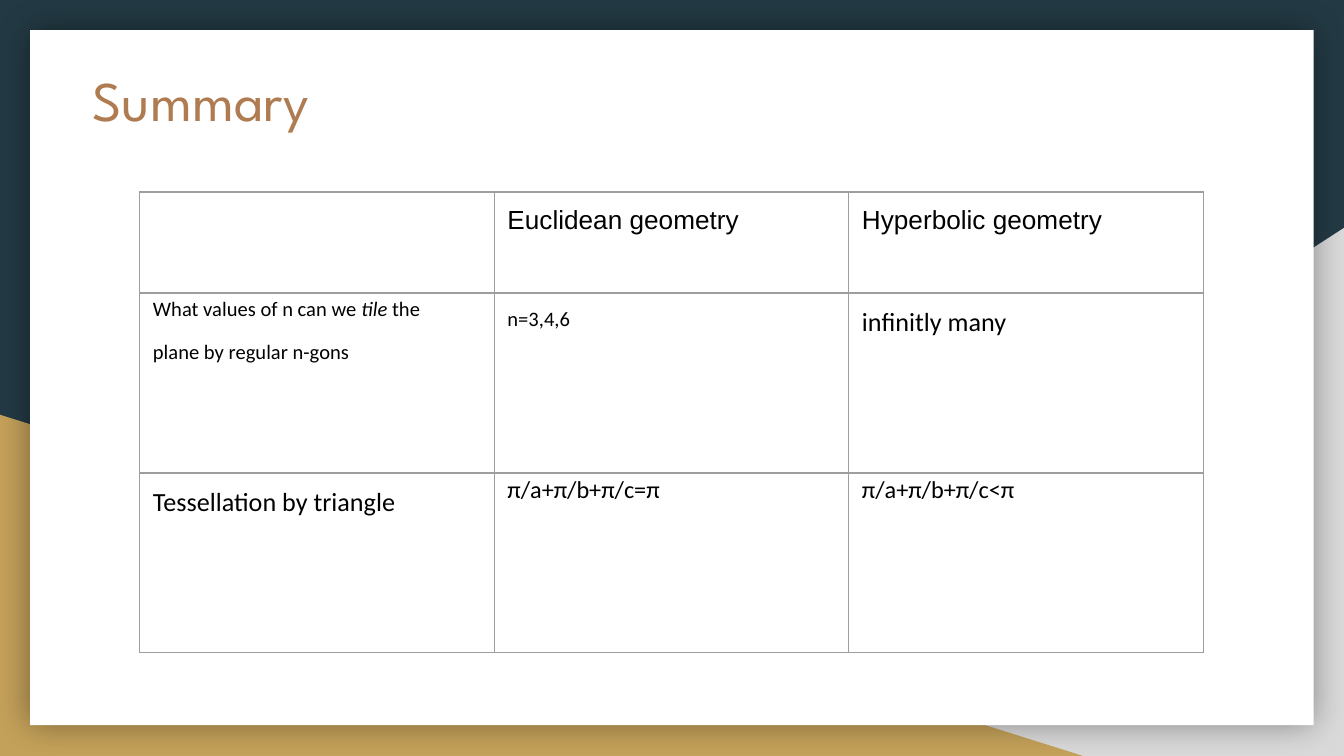
"""Build a summary slide comparing Euclidean and hyperbolic geometry."""
from lxml.etree import SubElement
from pptx import Presentation
from pptx.dml.color import RGBColor
from pptx.enum.shapes import MSO_SHAPE
from pptx.enum.text import MSO_ANCHOR, MSO_AUTO_SIZE, PP_ALIGN
from pptx.oxml import parse_xml
from pptx.oxml.ns import nsdecls, qn
from pptx.util import Cm, Pt

NAVY = RGBColor(0x23, 0x3A, 0x44)
GREY = RGBColor(0xD9, 0xD9, 0xD9)
GOLD = RGBColor(0xC4, 0xA1, 0x5A)
WHITE = RGBColor(0xFF, 0xFF, 0xFF)
BROWN = RGBColor(0xAF, 0x7B, 0x51)
BLACK = RGBColor(0x00, 0x00, 0x00)
BORDER = RGBColor(0x9E, 0x9E, 0x9E)

SLIDE_SIZE = (25.4, 14.29)
TITLE = "Summary"
TITLE_BOX = (1.5, 0.99, 20.85, 2.64)
BACKDROP = [
    (MSO_SHAPE.RIGHT_TRIANGLE, (9.96, 4.31, 15.44, 9.98), GREY, True),
    (MSO_SHAPE.RIGHT_TRIANGLE, (0, 7.84, 20.47, 6.45), GOLD, False),
]
CARD_BOX = (0.57, 0.57, 24.26, 13.14)
TABLE_ORIGIN = (2.64, 3.63)
COLUMN_WIDTH = 6.7
ROW_HEIGHTS = (1.91, 3.4, 3.4)
INSET = 0.25

TIGHT = {"line_spacing": 0.5}
TIGHT_AFTER = {"line_spacing": 0.5, "space_after": Pt(16)}
TIGHT_AROUND = {**TIGHT_AFTER, "space_before": Pt(16)}

# Each cell: font, size, then paragraphs of (spacing, [(text, italic), ...]).
ROWS = [
    [
        ("Arial", 14, []),
        ("Arial", 14, [({}, [("Euclidean geometry", False)])]),
        ("Arial", 14, [({}, [("Hyperbolic geometry", False)])]),
    ],
    [
        ("Calibri", 11, [
            (TIGHT, [("What values of n can we ", False), ("tile ", True), ("the", False)]),
            (TIGHT_AROUND, [("plane by regular n-gons", False)]),
        ]),
        ("Calibri", 11, [({}, [("n=3,4,6", False)])]),
        ("Calibri", 14, [({}, [("infinitly many", False)])]),
    ],
    [
        ("Calibri", 14, [({}, [("Tessellation by triangle", False)])]),
        ("Calibri", 13, [(TIGHT_AFTER, [("π/a+π/b+π/c=π", False)])]),
        ("Calibri", 13, [(TIGHT_AFTER, [("π/a+π/b+π/c<π", False)])]),
    ],
]


def lengths(values):
    return [Cm(value) for value in values]


def add_span(para, text, font, size, color, italic=False):
    span = para.add_run()
    span.text = text
    span.font.name = font
    span.font.size = Pt(size)
    span.font.italic = italic
    span.font.color.rgb = color


def set_insets(holder):
    for side in ("left", "top", "right", "bottom"):
        setattr(holder, f"margin_{side}", Cm(INSET))


def add_panel(page, kind, box, color):
    panel = page.shapes.add_shape(kind, *lengths(box))
    panel.shadow.inherit = False
    panel.fill.solid()
    panel.fill.fore_color.rgb = color
    panel.line.fill.background()
    return panel


def add_glow(panel):
    effects = panel.element.spPr.find(qn("a:effectLst"))
    shadow = SubElement(effects, qn("a:outerShdw"), blurRad=str(Pt(18)), dist="0",
                        dir="0", algn="ctr", rotWithShape="0")
    color = SubElement(shadow, qn("a:srgbClr"), val=str(BLACK))
    SubElement(color, qn("a:alpha"), val="40000")


def draw_borders(cell):
    properties = cell._tc.get_or_add_tcPr()
    for index, side in enumerate("LRTB"):
        properties.insert(index, parse_xml(
            f'<a:ln{side} {nsdecls("a")} w="{Pt(0.75)}"><a:solidFill>'
            f'<a:srgbClr val="{BORDER}"/></a:solidFill></a:ln{side}>'))


def fill_cell(cell, font, size, paragraphs):
    set_insets(cell)
    cell.fill.background()
    draw_borders(cell)
    for index, (spacing, spans) in enumerate(paragraphs):
        frame = cell.text_frame
        para = frame.add_paragraph() if index else frame.paragraphs[0]
        for name, value in spacing.items():
            setattr(para, name, value)
        for text, italic in spans:
            add_span(para, text, font, size, BLACK, italic)


def add_backdrop(page):
    page.background.fill.solid()
    page.background.fill.fore_color.rgb = NAVY
    for kind, box, color, flipped in BACKDROP:
        panel = add_panel(page, kind, box, color)
        if flipped:
            panel.element.spPr.xfrm.set("flipH", "1")
    add_glow(add_panel(page, MSO_SHAPE.RECTANGLE, CARD_BOX, WHITE))


def place_title(page):
    title = page.shapes.title
    title.left, title.top, title.width, title.height = lengths(TITLE_BOX)
    frame = title.text_frame
    set_insets(frame)
    frame.word_wrap = True
    frame.auto_size = MSO_AUTO_SIZE.NONE
    frame.vertical_anchor = MSO_ANCHOR.TOP
    para = frame.paragraphs[0]
    para.alignment = PP_ALIGN.LEFT
    add_span(para, TITLE, "League Spartan", 30, BROWN)
    page.shapes.element.append(title.element)


def add_summary_table(page):
    columns = len(ROWS[0])
    size = (COLUMN_WIDTH * columns, sum(ROW_HEIGHTS))
    table = page.shapes.add_table(len(ROWS), columns, *lengths(TABLE_ORIGIN + size)).table
    table.first_row = table.horz_banding = False
    for column in table.columns:
        column.width = Cm(COLUMN_WIDTH)
    for row, height, contents in zip(table.rows, ROW_HEIGHTS, ROWS):
        row.height = Cm(height)
        for cell, content in zip(row.cells, contents):
            fill_cell(cell, *content)


def main():
    deck = Presentation()
    deck.slide_width, deck.slide_height = lengths(SLIDE_SIZE)
    page = deck.slides.add_slide(deck.slide_layouts.get_by_name("Title Only"))
    add_backdrop(page)
    place_title(page)
    add_summary_table(page)
    deck.save("out.pptx")


if __name__ == "__main__":
    main()
